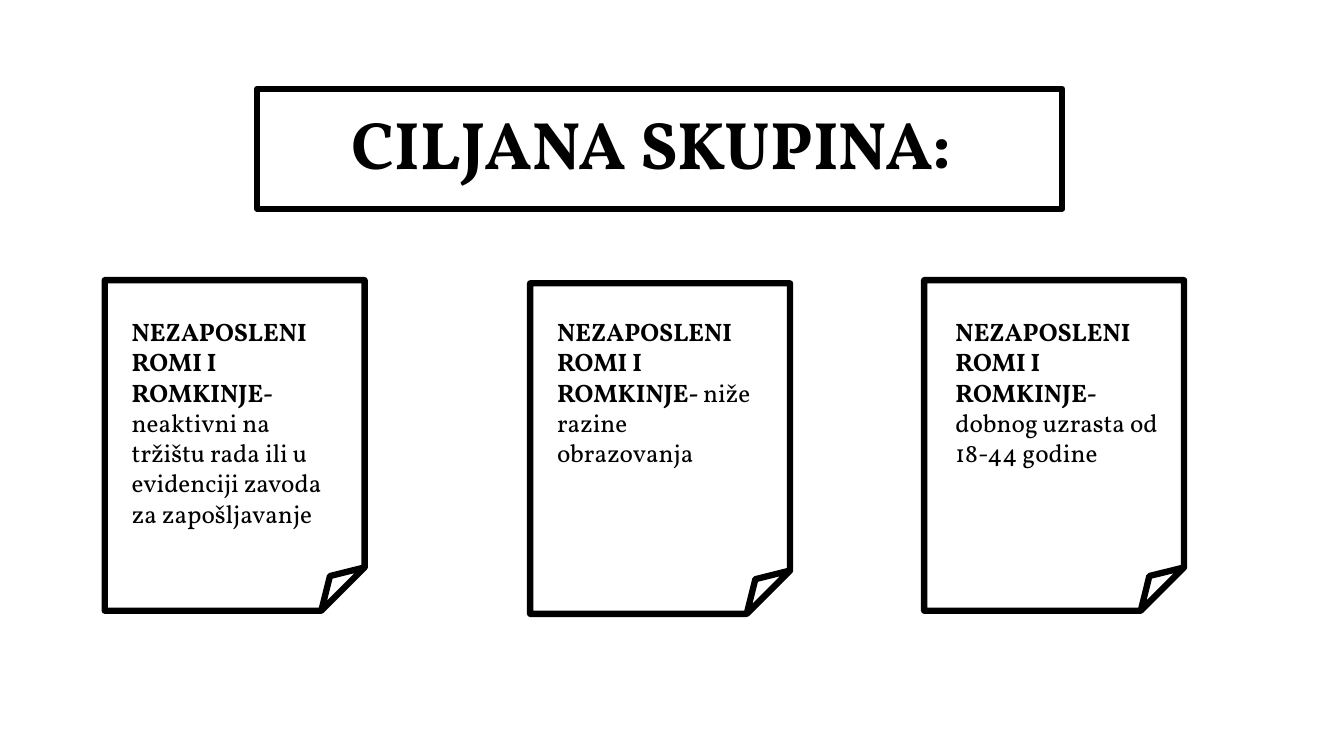
from pptx import Presentation
from pptx.dml.color import RGBColor
from pptx.enum.shapes import MSO_SHAPE
from pptx.enum.text import MSO_AUTO_SIZE, PP_ALIGN
from pptx.util import Cm, Pt

PROCESS = MSO_SHAPE.FLOWCHART_PROCESS
FOLDED_CORNER = MSO_SHAPE.FOLDED_CORNER
FIT_SHAPE = MSO_AUTO_SIZE.SHAPE_TO_FIT_TEXT
CENTER = PP_ALIGN.CENTER
COLORS = {"ink": "000000", "paper": "FFFFFF"}
FONT = "Vollkorn"
NOTE_WIDTH, NOTE_HEIGHT = 6.55, 8.33
TEXT_TOP = 7.85
GROUP = "NEZAPOSLENI ROMI I ROMKINJE- "
NOTES = [
    (2.64, 7.06, 0.43, 5.64, "neaktivni na tržištu rada ili u evidenciji zavoda za zapošljavanje"),
    (13.36, 7.14, 0.43, 3.33, "niže razine obrazovanja"),
    (23.29, 7.06, 0.54, 4.11, "dobnog uzrasta od 18-44 godine"),
]


def color(name):
    """Return a named colour."""
    return RGBColor.from_string(COLORS[name])


def add_outline(slide, kind, left, top, width, height):
    """Add an unfilled shape with a thick outline."""
    shape = slide.shapes.add_shape(kind, Cm(left), Cm(top), Cm(width), Cm(height))
    shape.shadow.inherit = False
    shape.fill.background()
    shape.line.color.rgb = color("ink")
    shape.line.width = Pt(4.5)


def add_text(slide, left, top, width, height, runs, size, wrap=True):
    """Add a one-paragraph text box from (text, bold) runs and return the paragraph."""
    box = slide.shapes.add_textbox(Cm(left), Cm(top), Cm(width), Cm(height))
    frame = box.text_frame
    frame.word_wrap = wrap
    frame.auto_size = FIT_SHAPE
    paragraph = frame.paragraphs[0]
    for text, bold in runs:
        run = paragraph.add_run()
        run.text = text
        run.font.bold = bold
    paragraph.font.name = FONT
    paragraph.font.size = Pt(size)
    paragraph.font.color.rgb = color("ink")
    return paragraph


def add_title(slide, left, top, width, height):
    """Add the framed heading."""
    add_outline(slide, PROCESS, left, top, width, height)
    paragraph = add_text(slide, left + 1.95, top + 0.22, 16, 2.31,
                         [("CILJANA SKUPINA:", True)], 48, wrap=False)
    paragraph.alignment = CENTER


def add_note(slide, left, top, inset, text_height, description):
    """Add a folded sheet describing one part of the target group."""
    add_outline(slide, FOLDED_CORNER, left, top, NOTE_WIDTH, NOTE_HEIGHT)
    add_text(slide, left + inset, TEXT_TOP, 5.69, text_height,
             [(GROUP, True), (description, False)], 18)


def main():
    """Build and save the presentation."""
    presentation = Presentation()
    presentation.slide_width = Cm(33.87)
    presentation.slide_height = Cm(19.05)
    slide = presentation.slides.add_slide(presentation.slide_layouts[6])
    slide.background.fill.solid()
    slide.background.fill.fore_color.rgb = color("paper")
    add_title(slide, 6.48, 2.24, 20.29, 3.02)
    for note in NOTES:
        add_note(slide, *note)
    presentation.save("out.pptx")


if __name__ == "__main__":
    main()
